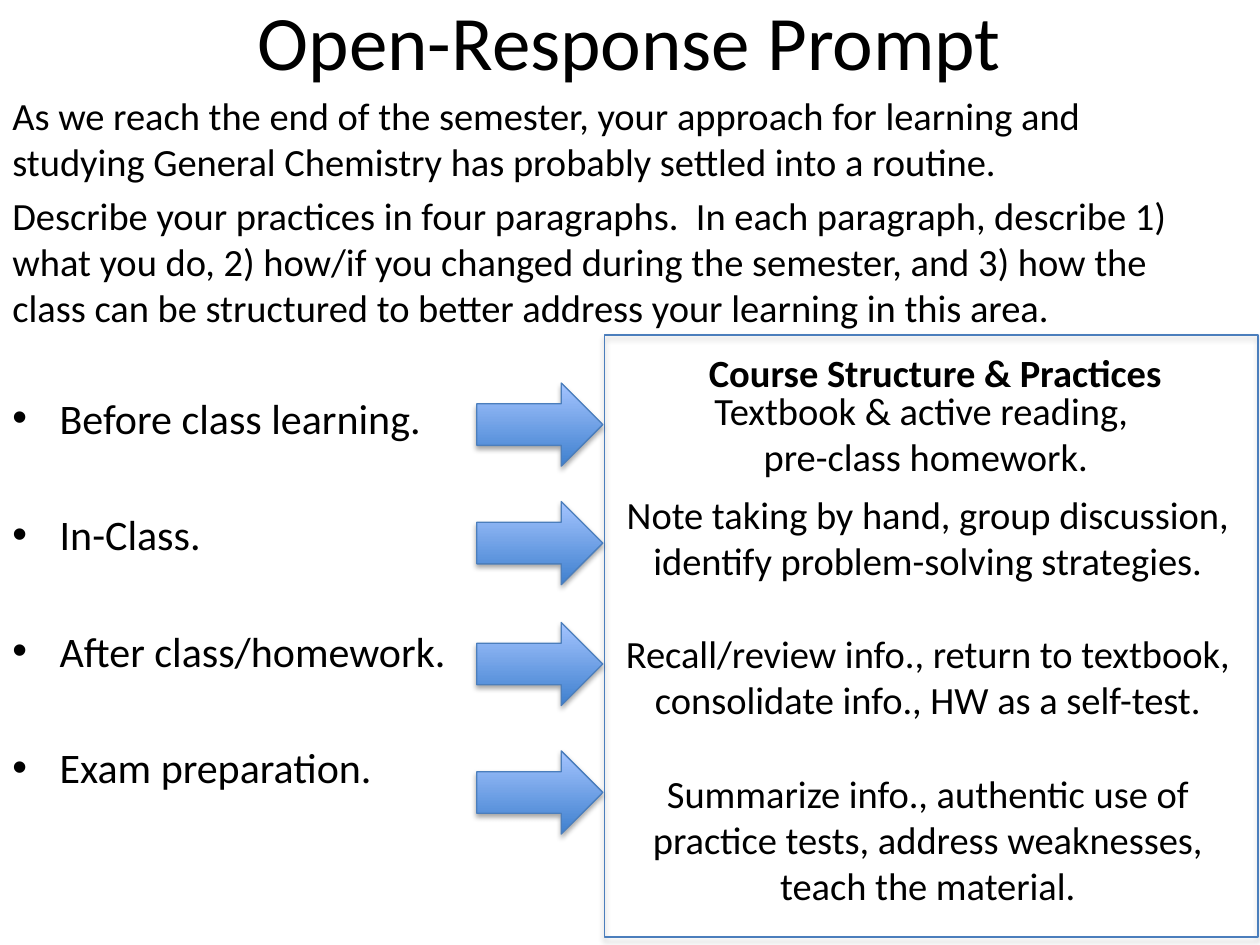
"""Build the Open-Response Prompt slide."""
from lxml import etree
from pptx import Presentation
from pptx.dml.color import RGBColor
from pptx.enum.shapes import MSO_SHAPE
from pptx.enum.text import MSO_ANCHOR, PP_ALIGN
from pptx.oxml.ns import qn
from pptx.util import Pt

RECTANGLE, RIGHT_ARROW = MSO_SHAPE.RECTANGLE, MSO_SHAPE.RIGHT_ARROW
LEFT, CENTER = PP_ALIGN.LEFT, PP_ALIGN.CENTER
TOP, MIDDLE = MSO_ANCHOR.TOP, MSO_ANCHOR.MIDDLE

INTRO = [
    "As we reach the end of the semester, your approach for learning and studying "
    "General Chemistry has probably settled into a routine.",
    "Describe your practices in four paragraphs.  In each paragraph, describe 1) what "
    "you do, 2) how/if you changed during the semester, and 3) how the class can be "
    "structured to better address your learning in this area.",
]
AREAS = ["Before class learning.", "In-Class.", "After class/homework.", "Exam preparation."]
BEFORE_CLASS = ["Textbook & active reading, ", "pre-class homework."]
LATER_PRACTICES = [
    "Note taking by hand, group discussion, identify problem-solving strategies.",
    "Recall/review info., return to textbook, consolidate info., HW as a self-test.",
    "Summarize info., authentic use of practice tests, address weaknesses, "
    "teach the material.",
]
ARROW_TOPS = [218.9, 286.6, 355.7, 429.1]


def color(value):
    """Turn a hex string into a colour."""
    return RGBColor.from_string(value)


def add_box(slide, left, top, width, height, wrap=True, anchor=TOP):
    """Add an empty text box and return its text frame."""
    frame = slide.shapes.add_textbox(Pt(left), Pt(top), Pt(width), Pt(height)).text_frame
    frame.word_wrap = wrap
    frame.vertical_anchor = anchor
    return frame


def add_bullet(paragraph, indent=27):
    """Give a paragraph a hanging bullet."""
    properties = paragraph._p.get_or_add_pPr()
    properties.set("marL", str(Pt(indent)))
    properties.set("indent", str(-Pt(indent)))
    etree.SubElement(properties, qn("a:buFont")).set("typeface", "Arial")
    etree.SubElement(properties, qn("a:buChar")).set("char", "•")


def write(frame, text, size=22, bold=False, align=LEFT, before=0, bullet=False):
    """Write one formatted paragraph into a text frame."""
    last = frame.paragraphs[-1]
    paragraph = frame.add_paragraph() if last.runs else last
    paragraph.alignment = align
    paragraph.space_before = Pt(before)
    if bullet:
        add_bullet(paragraph)
    run = paragraph.add_run()
    run.text = text
    run.font.name = "Calibri"
    run.font.size = Pt(size)
    run.font.bold = bold
    run.font.color.rgb = color("000000")


def add_shadow(shape):
    """Add a soft shadow below a shape."""
    shape.shadow.inherit = False
    effects = shape._element.spPr.find(qn("a:effectLst"))
    shadow = etree.SubElement(effects, qn("a:outerShdw"), blurRad=str(Pt(3.1)),
                              dist=str(Pt(1.8)), dir="5400000", rotWithShape="0")
    black = etree.SubElement(shadow, qn("a:srgbClr"), val="000000")
    etree.SubElement(black, qn("a:alpha"), val="35000")


def add_outlined(slide, kind, left, top, width, height):
    """Add an unfilled preset shape with a thin blue outline and a shadow."""
    shape = slide.shapes.add_shape(kind, Pt(left), Pt(top), Pt(width), Pt(height))
    shape.fill.background()
    shape.line.color.rgb = color("4B7EBC")
    shape.line.width = Pt(0.75)
    add_shadow(shape)
    return shape


def add_arrow(slide, top):
    """Add a gradient arrow that points to the practices panel."""
    arrow = add_outlined(slide, RIGHT_ARROW, 272.5, top, 72, 47.5)
    arrow.fill.gradient()
    arrow.fill.gradient_angle = 90
    for stop, shade in zip(arrow.fill.gradient_stops, ("3F80CE", "A4C4FF")):
        stop.color.rgb = color(shade)


def add_prompt(slide):
    """Add the title, the introduction and the four study areas."""
    title = add_box(slide, 36, -22.5, 648, 90, anchor=MIDDLE)
    write(title, "Open-Response Prompt", size=44, align=CENTER)
    body = add_box(slide, 0, 49, 705, 356)
    for text in INTRO:
        write(body, text, before=4.3)
    for index, area in enumerate(AREAS):
        write(body, area, size=24, before=37.8 if index else 35.3, bullet=True)


def add_practices(slide):
    """Add the texts of the course structure panel."""
    before_class = add_box(slide, 401, 217.5, 256, 60.5, wrap=False)
    for text in BEFORE_CLASS:
        write(before_class, text, align=CENTER)
    heading = add_box(slide, 398, 196, 286, 34)
    write(heading, "Course Structure & Practices", bold=True)
    later = add_box(slide, 343.5, 277, 373.5, 247)
    for index, text in enumerate(LATER_PRACTICES):
        write(later, text, align=CENTER, before=26.85 if index else 0)


def main():
    """Build and save the slide."""
    deck = Presentation()
    deck.slide_width, deck.slide_height = Pt(720), Pt(540)
    slide = deck.slides.add_slide(deck.slide_layouts[6])
    add_prompt(slide)
    add_practices(slide)
    add_outlined(slide, RECTANGLE, 345.5, 191.5, 373.5, 344)
    for top in ARROW_TOPS:
        add_arrow(slide, top)
    deck.save("out.pptx")


if __name__ == "__main__":
    main()
